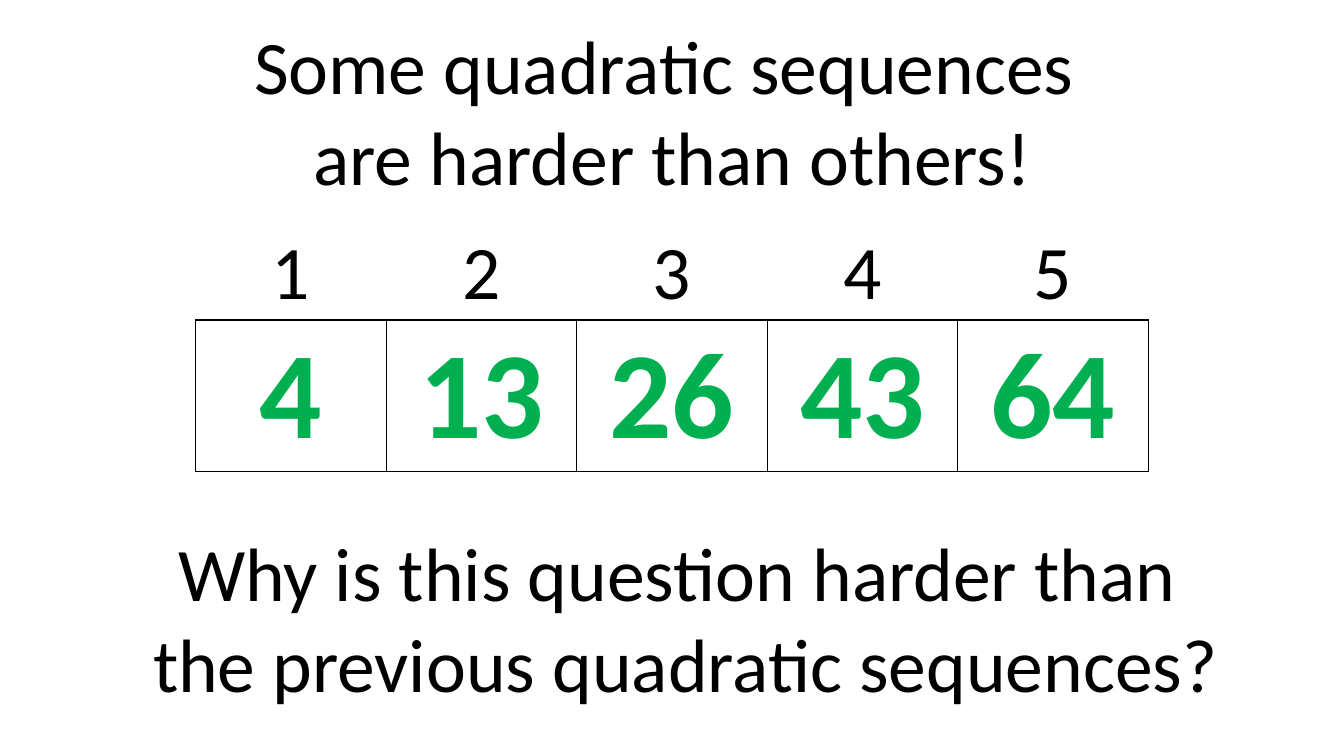
from lxml.etree import SubElement
from pptx import Presentation
from pptx.dml.color import RGBColor
from pptx.enum.text import MSO_ANCHOR, MSO_AUTO_SIZE, PP_ALIGN
from pptx.oxml.ns import qn
from pptx.util import Inches, Pt

SLIDE_WIDTH = Inches(13.33)
SLIDE_HEIGHT = Inches(7.5)
FONT = "Calibri"
BLACK = RGBColor(0x00, 0x00, 0x00)
WHITE = RGBColor(0xFF, 0xFF, 0xFF)
GREEN = RGBColor(0x00, 0xB0, 0x50)

TERM_LEFT = Inches(1.94)
TERM_TOP = 0.3 * SLIDE_HEIGHT
TERM_WIDTH = Inches(1.89)
POSITION_HEIGHT = Inches(0.92)
TERM_HEIGHT = Inches(1.49)
POSITIONS = [1, 2, 3, 4, 5]
TERMS = [4, 13, 26, 43, 64]


def add_line(paragraph, wording, size, color=BLACK, bold=False):
    paragraph.alignment = PP_ALIGN.CENTER
    run = paragraph.add_run()
    run.text = wording
    run.font.name = FONT
    run.font.size = Pt(size)
    run.font.bold = bold
    run.font.color.rgb = color


def add_statement(slide, left, top, width, lines):
    statement = slide.shapes.add_textbox(left, top, width, Inches(1.92))
    frame = statement.text_frame
    frame.word_wrap = True
    frame.auto_size = MSO_AUTO_SIZE.SHAPE_TO_FIT_TEXT
    for index, wording in enumerate(lines):
        paragraph = frame.add_paragraph() if index else frame.paragraphs[0]
        add_line(paragraph, wording, 54)


def set_borders(cell, edge_colors):
    properties = cell._tc.get_or_add_tcPr()
    for edge, color in zip("LRTB", edge_colors):
        border = SubElement(properties, qn(f"a:ln{edge}"), w=str(Pt(1)))
        fill = SubElement(border, qn("a:solidFill"))
        SubElement(fill, qn("a:srgbClr"), val=str(color))


def fill_row(row, values, anchor, edge_colors, size, color=BLACK, bold=False):
    for cell, value in zip(row.cells, values):
        cell.margin_left = cell.margin_top = cell.margin_right = Inches(0.01)
        cell.margin_bottom = 0
        cell.vertical_anchor = anchor
        set_borders(cell, edge_colors)
        cell.fill.background()
        add_line(cell.text_frame.paragraphs[0], str(value), size, color, bold)


def add_sequence(slide):
    sequence = slide.shapes.add_table(
        2, len(TERMS), TERM_LEFT, int(TERM_TOP),
        len(TERMS) * TERM_WIDTH, POSITION_HEIGHT + TERM_HEIGHT,
    ).table
    sequence.first_row = False
    sequence.horz_banding = False
    position_row, term_row = sequence.rows
    position_row.height = POSITION_HEIGHT
    term_row.height = TERM_HEIGHT
    fill_row(position_row, POSITIONS, MSO_ANCHOR.BOTTOM,
             [WHITE, WHITE, WHITE, BLACK], 54)
    fill_row(term_row, TERMS, MSO_ANCHOR.MIDDLE, [BLACK] * 4, 88, GREEN, True)


def main():
    presentation = Presentation()
    presentation.slide_width = SLIDE_WIDTH
    presentation.slide_height = SLIDE_HEIGHT
    slide = presentation.slides.add_slide(presentation.slide_layouts[6])
    add_sequence(slide)
    add_statement(slide, Inches(2.3), Inches(0.14), Inches(8.74),
                  ["Some quadratic sequences ", "are harder than others!"])
    add_statement(slide, Inches(1.23), Inches(5.17), Inches(11.14),
                  ["Why is this question harder than ",
                   "the previous quadratic sequences?"])
    presentation.save("out.pptx")


if __name__ == "__main__":
    main()
